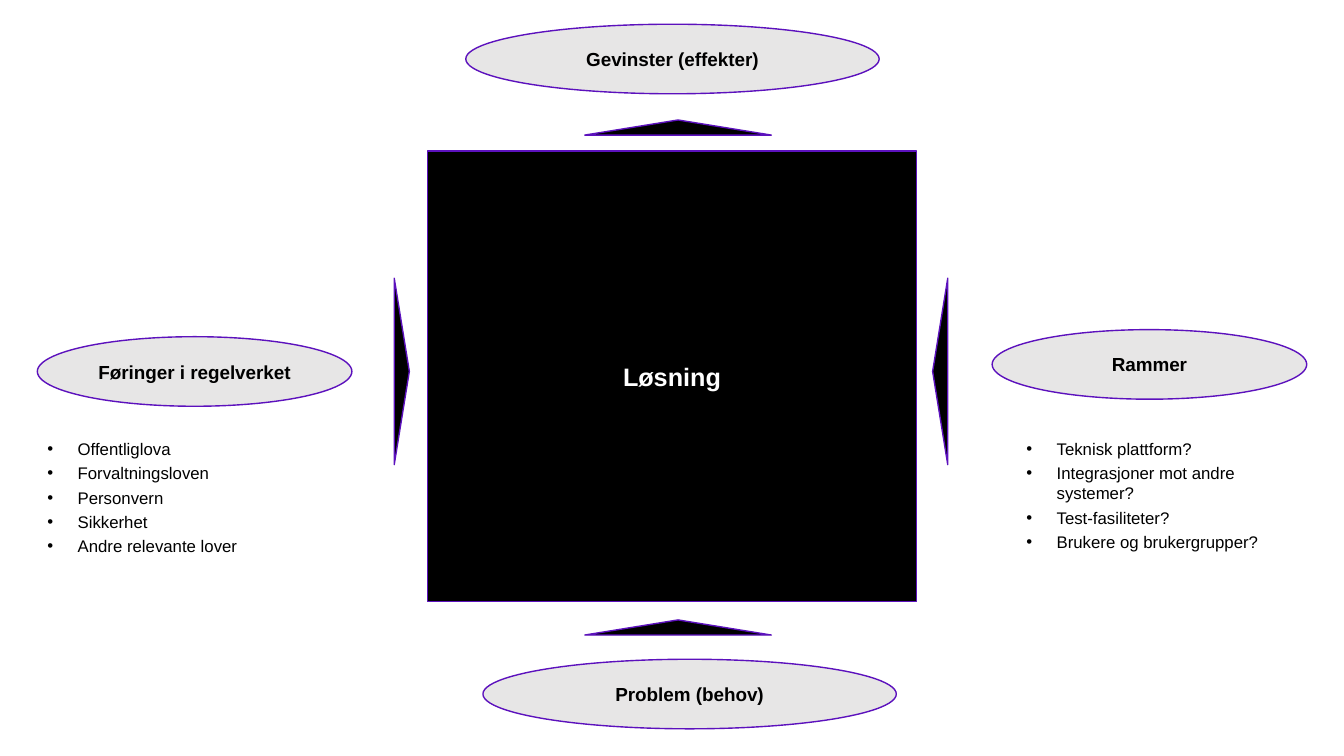
"""Build a slide showing a solution box framed by benefits, problem, rules and constraints."""
from dataclasses import dataclass

from lxml.etree import SubElement
from pptx import Presentation
from pptx.dml.color import RGBColor
from pptx.enum.shapes import MSO_SHAPE
from pptx.enum.text import MSO_ANCHOR, MSO_AUTO_SIZE, PP_ALIGN
from pptx.oxml.ns import qn
from pptx.shapes.base import BaseShape
from pptx.slide import Slide
from pptx.text.text import Font
from pptx.util import Inches, Pt

BLACK = RGBColor(0x00, 0x00, 0x00)
WHITE = RGBColor(0xFF, 0xFF, 0xFF)
GREY = RGBColor(0xE7, 0xE6, 0xE6)
PURPLE = RGBColor(0x5C, 0x11, 0xBD)
FONT = "Arial"
OVAL_HEIGHT = 0.69
ARROW_WIDTH, ARROW_HEIGHT = 1.85, 0.15


@dataclass
class Oval:
    text: str
    left: float
    top: float
    width: float


@dataclass
class Arrow:
    left: float
    top: float
    rotation: int = 0


@dataclass
class BulletList:
    idx: int
    left: float
    width: float
    items: list[str]


OVALS = [
    Oval("Problem (behov)", 4.79, 6.54, 4.1),
    Oval("Gevinster (effekter)", 4.62, 0.24, 4.1),
    Oval("Rammer", 9.84, 3.27, 3.12),
    Oval("Føringer i regelverket", 0.37, 3.34, 3.12),
]
ARROWS = [
    Arrow(8.4, 3.61, 270),
    Arrow(3.06, 3.61, 90),
    Arrow(5.8, 1.19),
    Arrow(5.8, 6.15),
]
LISTS = [
    BulletList(1, 0.37, 2.15, [
        "Offentliglova", "Forvaltningsloven", "Personvern", "Sikkerhet",
        "Andre relevante lover",
    ]),
    BulletList(2, 10.08, 2.88, [
        "Teknisk plattform?", "Integrasjoner mot andre systemer?",
        "Test-fasiliteter?", "Brukere og brukergrupper?",
    ]),
]


def style_font(font: Font, size: float, color: RGBColor, bold: bool = False) -> None:
    """Apply the slide's font with the given size and colour."""
    font.name = FONT
    font.size = Pt(size)
    font.bold = bold
    font.color.rgb = color


def add_outlined(s: Slide, kind: MSO_SHAPE, left: float, top: float,
                 width: float, height: float, fill: RGBColor) -> BaseShape:
    """Add a filled shape with a thin purple outline."""
    sp = s.shapes.add_shape(kind, Inches(left), Inches(top), Inches(width), Inches(height))
    sp.shadow.inherit = False
    sp.fill.solid()
    sp.fill.fore_color.rgb = fill
    sp.line.color.rgb = PURPLE
    sp.line.width = Pt(1)
    return sp


def add_label(sp: BaseShape, text: str, size: float, color: RGBColor) -> None:
    """Centre a bold label in a shape."""
    tf = sp.text_frame
    tf.text = text
    tf.word_wrap = True
    tf.vertical_anchor = MSO_ANCHOR.MIDDLE
    p = tf.paragraphs[0]
    p.alignment = PP_ALIGN.CENTER
    style_font(p.runs[0].font, size, color, bold=True)


def fill_list(s: Slide, bullets: BulletList) -> None:
    """Move a body placeholder into place and fill it with bullets."""
    sp = s.placeholders[bullets.idx]
    sp.left, sp.top = Inches(bullets.left), Inches(4.3)
    sp.width, sp.height = Inches(bullets.width), Inches(1.49)
    tf = sp.text_frame
    tf.text = "\n".join(bullets.items)
    tf.word_wrap = True
    tf.auto_size = MSO_AUTO_SIZE.NONE
    tf.vertical_anchor = MSO_ANCHOR.TOP
    for i, p in enumerate(tf.paragraphs):
        p.space_before = Pt(3 if i else 0)
        pPr = p._p.get_or_add_pPr()
        pPr.set("marL", str(Inches(0.3)))
        pPr.set("indent", str(Inches(-0.3)))
        SubElement(pPr, qn("a:buChar"), char="•")
        style_font(p.runs[0].font, 12, BLACK)


def main() -> None:
    """Build and save the slide."""
    prs = Presentation()
    prs.slide_width, prs.slide_height = Inches(13.33), Inches(7.5)
    s = prs.slides.add_slide(prs.slide_layouts[3])
    title = s.shapes.title.element
    title.getparent().remove(title)

    solution = add_outlined(s, MSO_SHAPE.RECTANGLE, 4.24, 1.5, 4.85, 4.47, BLACK)
    add_label(solution, "Løsning", 18, WHITE)
    for oval in OVALS:
        sp = add_outlined(s, MSO_SHAPE.OVAL, oval.left, oval.top, oval.width, OVAL_HEIGHT, GREY)
        add_label(sp, oval.text, 13.5, BLACK)
    for arrow in ARROWS:
        sp = add_outlined(s, MSO_SHAPE.ISOSCELES_TRIANGLE, arrow.left, arrow.top,
                          ARROW_WIDTH, ARROW_HEIGHT, BLACK)
        sp.rotation = arrow.rotation
    for bullets in LISTS:
        fill_list(s, bullets)
    prs.save("out.pptx")


if __name__ == "__main__":
    main()
